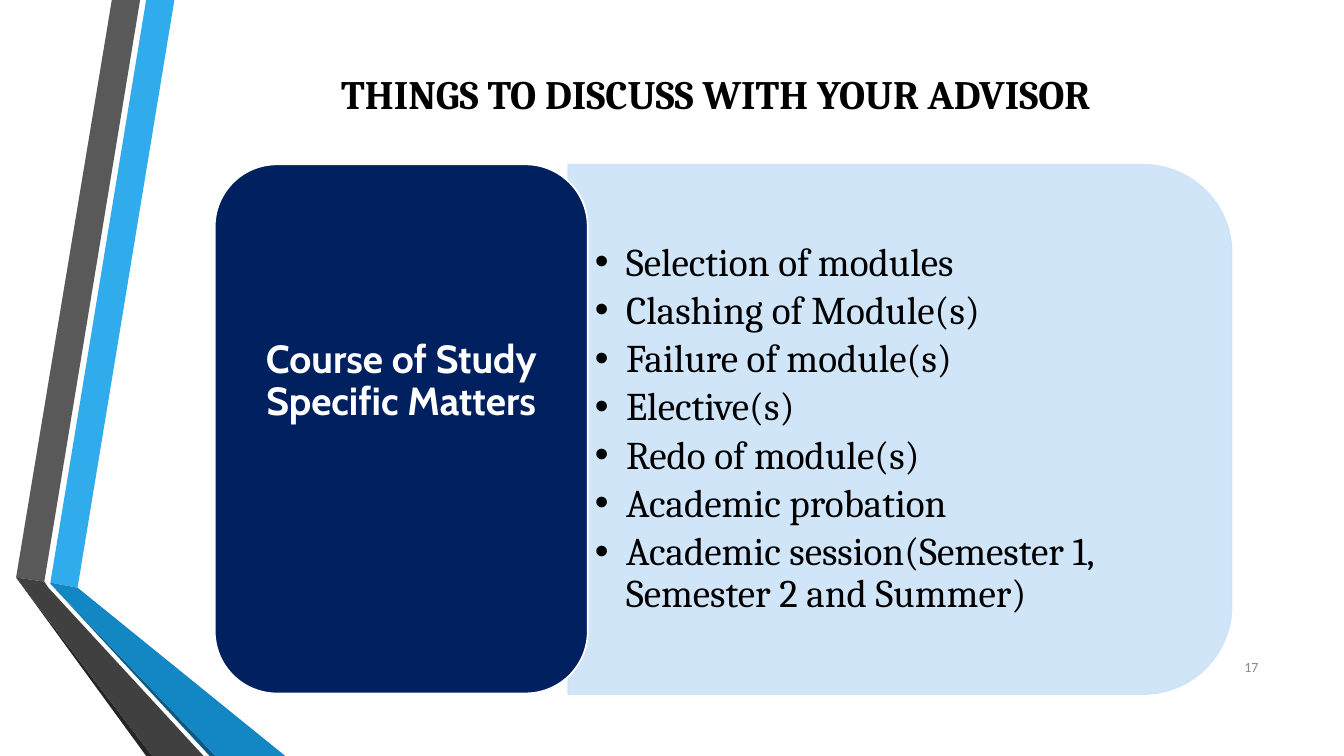
from dataclasses import dataclass

from lxml.etree import SubElement
from pptx import Presentation
from pptx.dml.color import RGBColor
from pptx.enum.shapes import MSO_SHAPE
from pptx.enum.text import MSO_ANCHOR, PP_ALIGN
from pptx.oxml.ns import qn
from pptx.util import Inches, Pt

COLORS = {
    "black": "000000", "white": "FFFFFF", "navy": "002060", "pale": "CDE3F8",
    "number": "898989", "sky": "30ACEC", "blue": "1287C3", "deep": "0C5A82",
    "gray": "595959", "dark": "404040", "shade": "262626",
}


@dataclass
class Ribbon:
    color: str
    points: list[tuple[float, float]]


@dataclass
class Panel:
    kind: MSO_SHAPE
    box: tuple[float, float, float, float]
    fill: str
    line: str
    rotation: float = 0
    opacity: int = 100


@dataclass
class Label:
    lines: list[str]
    box: tuple[float, float, float, float]
    font: str
    size: float
    color: str
    align: PP_ALIGN = PP_ALIGN.CENTER
    bold: bool = False
    margins: tuple[float, float] = (0.1, 0.05)
    spacing: float = 1.0
    bulleted: bool = False


RIBBONS = [
    Ribbon("sky", [(0.5, 5.78), (0.77, 5.83), (1.73, 0), (1.45, 0)]),
    Ribbon("gray", [(1.39, 0), (1.11, 0), (0.16, 5.73), (0.44, 5.77)]),
    Ribbon("shade", [(0.16, 5.73), (1.45, 7.5), (1.51, 7.5)]),
    Ribbon("deep", [(0.5, 5.79), (2.08, 7.5), (2.14, 7.5)]),
    Ribbon("blue", [(0.5, 5.79), (2.14, 7.5), (2.83, 7.5), (0.77, 5.83), (0.5, 5.78)]),
    Ribbon("dark", [(2.02, 7.5), (0.48, 5.83), (0.44, 5.77), (0.16, 5.73), (1.51, 7.5)]),
]

PANELS = [
    Panel(MSO_SHAPE.ROUND_2_SAME_RECTANGLE, (6.3, 0.97, 5.25, 6.58),
          "pale", "pale", rotation=90, opacity=90),
    Panel(MSO_SHAPE.ROUNDED_RECTANGLE, (2.13, 1.63, 3.7, 5.25), "navy", "white"),
]

LABELS = [
    Label(["THINGS TO DISCUSS WITH YOUR ADVISOR"], (1.62, 0.62, 10.96, 0.62),
          "Cambria", 28.8, "black", bold=True),
    Label(["Selection of modules", "Clashing of Module(s)", "Failure of module(s)",
           "Elective(s)", "Redo of module(s)", "Academic probation",
           "Academic session(Semester 1, Semester 2 and Summer)"],
          (5.63, 1.89, 6.33, 4.74), "Cambria", 28, "black", align=PP_ALIGN.LEFT,
          margins=(0.27, 0.14), spacing=0.9, bulleted=True),
    Label(["Course of Study Specific Matters"], (2.31, 1.81, 3.34, 3.96),
          "Cabin", 28, "white", bold=True, margins=(0.12, 0.06), spacing=0.9),
    Label(["17"], (11.98, 6.42, 0.6, 0.4), "Calibri", 10, "number", align=PP_ALIGN.RIGHT),
]


def rgb(name: str) -> RGBColor:
    return RGBColor.from_string(COLORS[name])


def set_fill(sp, color: str) -> None:
    sp.shadow.inherit = False
    sp.fill.solid()
    sp.fill.fore_color.rgb = rgb(color)


def draw_ribbon(s, ribbon: Ribbon) -> None:
    points = [(Inches(x), Inches(y)) for x, y in ribbon.points]
    builder = s.shapes.build_freeform(*points[0])
    builder.add_line_segments(points[1:], close=True)
    sp = builder.convert_to_shape()
    set_fill(sp, ribbon.color)
    sp.line.fill.background()


def draw_panel(s, panel: Panel) -> None:
    sp = s.shapes.add_shape(panel.kind, *map(Inches, panel.box))
    sp.rotation = panel.rotation
    set_fill(sp, panel.fill)
    sp.line.color.rgb = rgb(panel.line)
    sp.line.width = Pt(1.25)
    if panel.opacity < 100:
        for color in sp.element.spPr.iter(qn("a:srgbClr")):
            SubElement(color, qn("a:alpha"), val=str(panel.opacity * 1000))


def add_bullet(p) -> None:
    pPr = p._p.get_or_add_pPr()
    indent = Inches(0.31)
    pPr.set("marL", str(indent))
    pPr.set("indent", str(-indent))
    SubElement(pPr, qn("a:buFont"), typeface="Arial")
    SubElement(pPr, qn("a:buChar"), char="•")


def draw_label(s, label: Label) -> None:
    tf = s.shapes.add_textbox(*map(Inches, label.box)).text_frame
    tf.word_wrap = True
    tf.vertical_anchor = MSO_ANCHOR.MIDDLE
    tf.margin_left = tf.margin_right = Inches(label.margins[0])
    tf.margin_top = tf.margin_bottom = Inches(label.margins[1])
    tf.text = "\n".join(label.lines)
    for p in tf.paragraphs:
        p.alignment = label.align
        p.line_spacing = label.spacing
        if label.bulleted:
            p.space_after = Pt(4.2)
            add_bullet(p)
        for r in p.runs:
            r.font.name = label.font
            r.font.size = Pt(label.size)
            r.font.bold = label.bold
            r.font.color.rgb = rgb(label.color)


def main() -> None:
    prs = Presentation()
    prs.slide_width, prs.slide_height = Inches(13.33), Inches(7.5)
    s = prs.slides.add_slide(prs.slide_layouts[6])

    # Folded ribbons on the left edge
    for ribbon in RIBBONS:
        draw_ribbon(s, ribbon)

    # Topic panel over the list panel
    for panel in PANELS:
        draw_panel(s, panel)

    # Title, list, topic and slide number
    for label in LABELS:
        draw_label(s, label)

    prs.save("out.pptx")


if __name__ == "__main__":
    main()
